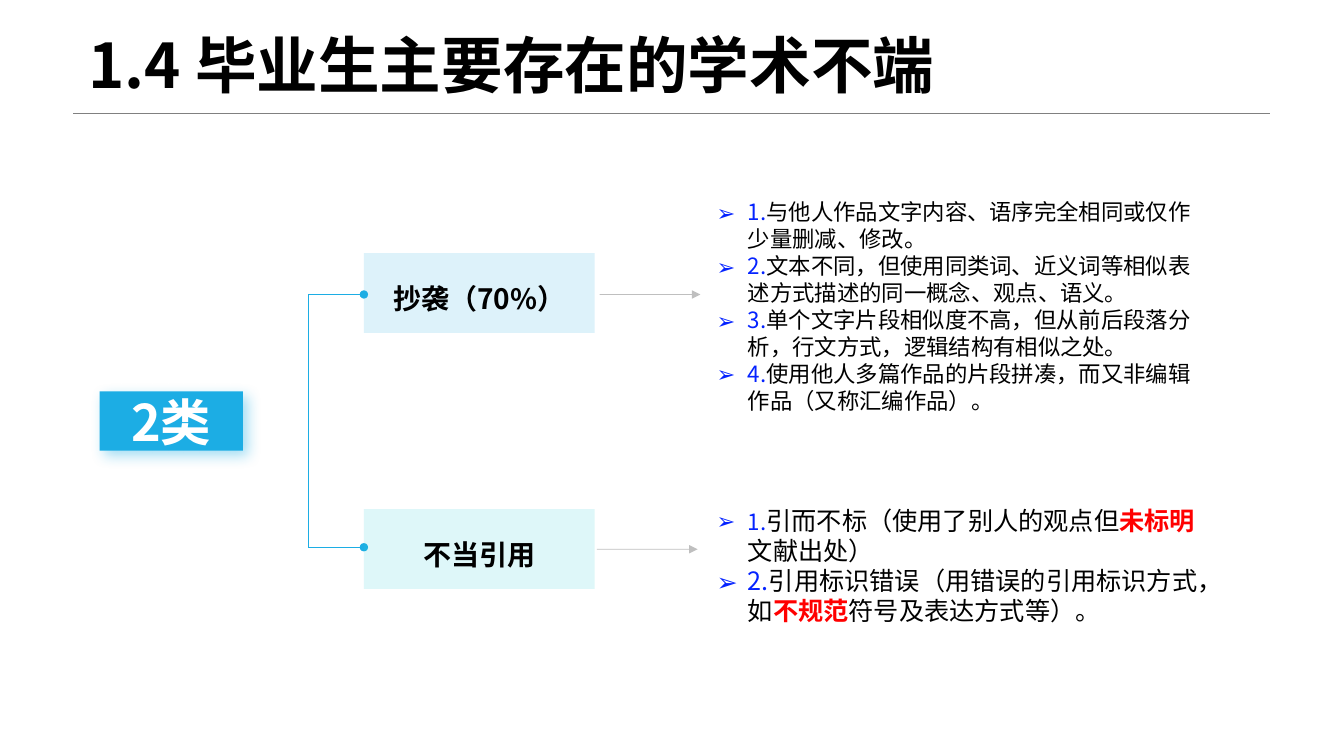
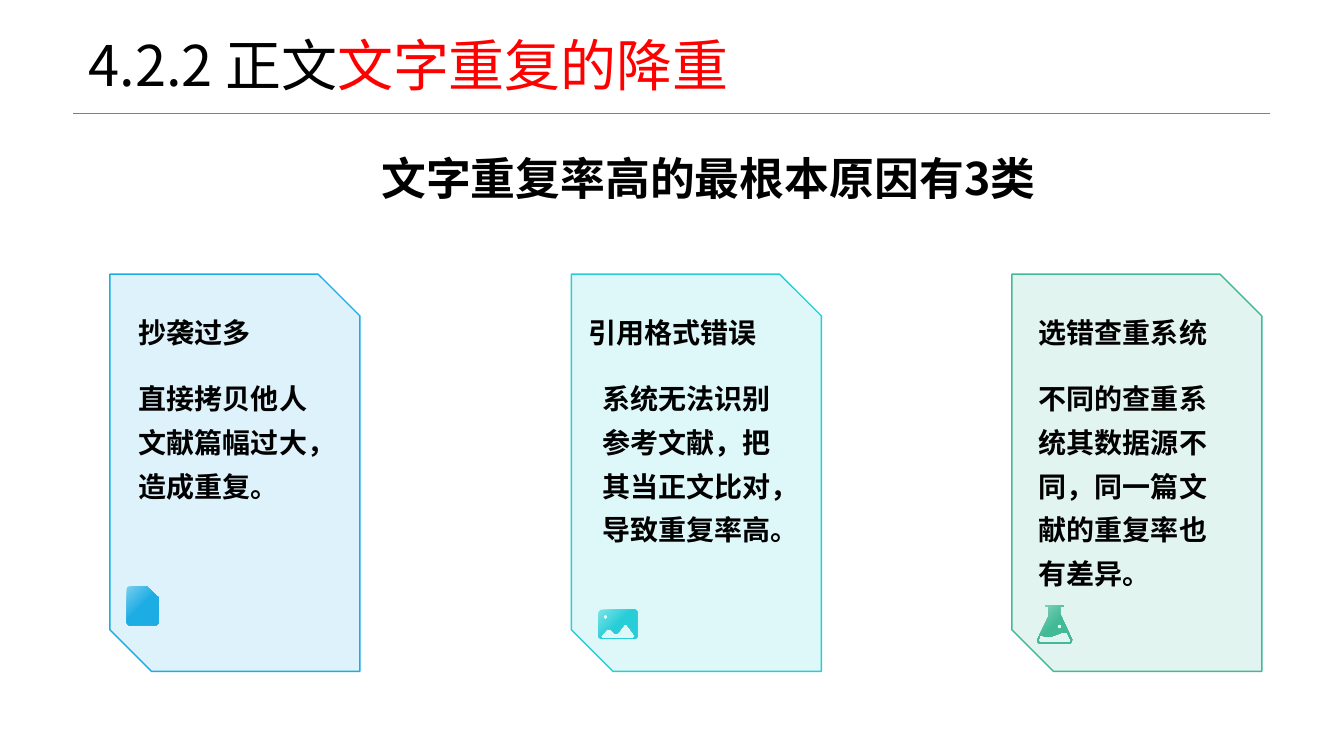
from math import cos, pi, sin

from lxml.etree import SubElement as Sub
from pptx import Presentation
from pptx.dml.color import RGBColor as RGB
from pptx.enum.shapes import MSO_CONNECTOR as Wire, MSO_SHAPE as Form
from pptx.enum.text import MSO_ANCHOR as Anchor, PP_ALIGN as Align
from pptx.oxml.ns import qn
from pptx.util import Cm, Pt

FONT = "Noto Sans CJK SC"
HUE = {
    "black": "000000", "white": "FFFFFF", "grey": "808080", "red": "FF0000",
    "ink": "0523FF", "blue": "1CADE4", "teal": "27CED7", "green": "42BA97",
    "sky": "77CEEF", "aqua": "7DE2E7", "mint": "8DD6C1",
}


def link(page, start, end, hue, width, head=None, tail=None, alpha=None):
    """Draw a straight line; head and tail name the arrowheads at start and end."""
    wire = page.shapes.add_connector(Wire.STRAIGHT, *map(Cm, start + end))
    wire.line.width = Pt(width)
    wire.line.color.rgb = RGB.from_string(HUE[hue])
    props = wire._element.spPr
    Sub(props, qn("a:effectLst"))
    line = props.find(qn("a:ln"))
    if alpha:
        Sub(line.find(".//" + qn("a:srgbClr")), qn("a:alpha"), val=str(alpha * 1000))
    for tag, mark in (("a:headEnd", head), ("a:tailEnd", tail)):
        if mark:
            Sub(line, qn(tag), type=mark)


def write(page, at, paras, size, bold=False, hue="black", align=Align.LEFT,
          anchor=Anchor.TOP, lead=None, inset=None, mark=None,
          form=None, fill=None, alpha=None, edge=None):
    """Put text in a box, or in a form if one is given.

    Each paragraph is a list of runs: (text, changes to size, hue or bold).
    """
    at = [Cm(n) for n in at]
    if form is None:
        box = page.shapes.add_textbox(*at)
    else:
        box = page.shapes.add_shape(form, *at)
        box.shadow.inherit = False
        box.fill.solid()
        box.fill.fore_color.rgb = RGB.from_string(HUE[fill])
        if alpha:
            tint = box._element.spPr.find(qn("a:solidFill"))[0]
            Sub(tint, qn("a:alpha"), val=str(alpha * 1000))
        if edge:
            box.line.width = Pt(1)
            box.line.color.rgb = RGB.from_string(HUE[edge])
        else:
            box.line.fill.background()
    frame = box.text_frame
    frame.word_wrap = True
    frame.vertical_anchor = anchor
    if inset:
        frame.margin_left = frame.margin_right = Cm(inset)
        frame.margin_top = frame.margin_bottom = Cm(inset)
    for i, runs in enumerate(paras):
        para = frame.add_paragraph() if i else frame.paragraphs[0]
        para.alignment = align
        if lead:
            para.line_spacing = lead
        if mark:
            props = para._p.get_or_add_pPr()
            props.set("marL", str(Cm(0.79)))
            props.set("indent", str(-Cm(0.79)))
            Sub(props, qn("a:buFont"), typeface=FONT)
            Sub(props, qn("a:buChar"), char=mark)
        for text, look in runs:
            run = para.add_run()
            run.text = text
            font = run.font
            font.size = Pt(look.get("size", size))
            font.bold = look.get("bold", bold)
            font.color.rgb = RGB.from_string(HUE[look.get("hue", hue)])
            font.name = FONT
            Sub(run._r.get_or_add_rPr(), qn("a:ea"), typeface=FONT)
    return box


deck = Presentation()
deck.slide_width, deck.slide_height = Cm(33.87), Cm(19.05)
INK, RED = {"hue": "ink"}, {"hue": "red"}
ALERT = {"hue": "red", "bold": True}

# Title and rule of every slide
titles = [
    ([("1.4 毕业生主要存在的学术不端", {})], 44, True),
    ([("4.2.2 正文", {}), ("文字重复的降重", RED)], 40, False),
]
pages = []
for runs, size, bold in titles:
    page = deck.slides.add_slide(deck.slide_layouts[6])
    link(page, (1.85, 2.85), (32, 2.85), "grey", 0.25)
    write(page, (1.98, -0.12, 29.21, 3.68), [runs], size, bold,
          anchor=Anchor.MIDDLE, lead=0.9)
    pages.append(page)

# Slide 1: two kinds of misconduct
page = pages[0]
SPINE, LEFT = 7.77, 9.17
link(page, (SPINE, 7.42), (SPINE, 13.79), "blue", 1)
label = write(page, (2.51, 9.86, 3.61, 1.5), [[("2类", {})]], 36, True, "white",
              Align.CENTER, Anchor.MIDDLE, form=Form.RECTANGLE, fill="blue")
glow = Sub(label._element.spPr.find(qn("a:effectLst")), qn("a:outerShdw"),
           blurRad=str(Pt(10)), dist=str(Pt(5)), dir=str(45 * 60000),
           algn="tl", rotWithShape="0")
tint = Sub(glow, qn("a:srgbClr"), val=HUE["blue"])
Sub(tint, qn("a:alpha"), val="40000")

copying = [
    "与他人作品文字内容、语序完全相同或仅作少量删减、修改。",
    "文本不同，但使用同类词、近义词等相似表述方式描述的同一概念、观点、语义。",
    "单个文字片段相似度不高，但从前后段落分析，行文方式，逻辑结构有相似之处。",
    "使用他人多篇作品的片段拼凑，而又非编辑作品（又称汇编作品）。",
]
copying = [[(f"{i}.", INK), (text, {})] for i, text in enumerate(copying, 1)]
citing = [
    [("1.", {"hue": "ink", "size": 16}), ("引而不标（使用了别人的观点但", {}),
     ("未标明", ALERT), ("文献出处）", {})],
    [("2.", INK), ("引用标识错误（用错误的引用标识方式，如", {}),
     ("不规范", ALERT), ("符号及表达方式等）。", {})],
]
kinds = [  # name, fill, box top, stub y, arrow start, list place, list, size
    ("抄袭（70%）", "blue", 6.38, 7.42, (15.11, 7.42),
     (17.81, 4.88, 12.65, 5.74), copying, 16),
    ("不当引用", "teal", 12.83, 13.79, (15.04, 13.84),
     (17.81, 12.6, 12.85, 3.33), citing, 18),
]
for name, fill, top, stub, (x, y), place, items, size in kinds:
    link(page, (LEFT, stub), (SPINE, stub), "blue", 1, head="oval")
    write(page, (LEFT, top, 5.82, 2.01), [[(name, {})]], 20, True,
          align=Align.CENTER, anchor=Anchor.MIDDLE, lead=1.3,
          form=Form.RECTANGLE, fill=fill, alpha=15)
    link(page, (x, y), (x + 2.54, y), "grey", 0.5, tail="triangle", alpha=50)
    write(page, place, items, size, mark="➢")

# Slide 2: three causes; icon outlines are in hundredths of a centimetre
page = pages[1]
write(page, (9.04, 3.25, 17.63, 2.03), [[("文字重复率高的最根本原因有3类", {})]],
      32, True, align=Align.CENTER, anchor=Anchor.BOTTOM)

ring = [(6 * cos(k * pi / 8), 6 * sin(k * pi / 8)) for k in range(16)]
sheet = [
    [(4, 0), (50, 0), (79, 27), (79, 92), (75, 97), (4, 97), (0, 92), (0, 4)],
    [(28, 36), (43, 36), (43, 38), (30, 38), (30, 74), (28, 74)],
]
photo = [
    [(5, 0), (92, 0), (97, 5), (97, 68), (92, 73), (5, 73), (0, 68), (0, 5)],
    [(64, 37), (71, 37), (92, 66), (88, 71), (7, 71), (5, 66), (20, 49),
     (28, 48), (41, 59), (48, 58)],
    [(17 + x, 18 + y) for x, y in ring],
]
flask = [
    [(20, 0), (66, 0), (66, 3), (58, 3), (58, 23), (61, 28), (88, 86), (86, 93),
     (83, 95), (4, 95), (0, 91), (0, 86), (28, 28), (28, 3), (20, 3)],
    [(46, 74), (36, 78), (22, 79), (8, 74), (3, 87), (5, 92), (84, 92), (84, 87),
     (76, 69), (60, 69)],
    [(56 + x, 53 + y) for x, y in ring],
]
cards = [  # left, hue, light hue, name, place, body, place, icon, place
    (2.77, "blue", "sky", "抄袭过多", (3.2, 4.93),
     "直接拷贝他人文献篇幅过大，造成重复。", (3.2, 3.84), sheet, (3.2, 14.78)),
    (14.4, "teal", "aqua", "引用格式错误", (14.53, 6.02),
     "系统无法识别参考文献，把其当正文比对，导致重复率高。", (14.88, 5.05),
     photo, (15.09, 15.37)),
    (25.5, "green", "mint", "选错查重系统", (25.88, 4.93),
     "不同的查重系统其数据源不同，同一篇文献的重复率也有差异。", (25.88, 6.05),
     flask, (26.14, 15.26)),
]
for left, hue, light, name, (x, width), body, (side, height), icon, spot in cards:
    write(page, (left, 6.91, 6.3, 10.01), [], 20, form=Form.SNIP_2_DIAG_RECTANGLE,
          fill=hue, alpha=15, edge=hue)
    write(page, (x, 7.62, width, 1.47), [[(name, {})]], 20, True,
          anchor=Anchor.BOTTOM, inset=0.3)
    write(page, (side, 9.07, 5.33, height), [[(body, {})]], 20, True,
          lead=1.3, inset=0.3)
    pen = page.shapes.build_freeform(*icon[0][0], scale=Cm(0.01))
    for i, points in enumerate(icon):
        if i:
            pen.move_to(*points[0])
        pen.add_line_segments(points[1:], close=True)
    sign = pen.convert_to_shape(*map(Cm, spot))
    sign.shadow.inherit = False
    sign.line.fill.background()
    sign.fill.gradient()
    sign.fill.gradient_angle = 315
    for stop, shade, place in zip(sign.fill.gradient_stops, (light, hue), (0, 0.5)):
        stop.color.rgb = RGB.from_string(HUE[shade])
        stop.position = place

deck.save("out.pptx")
